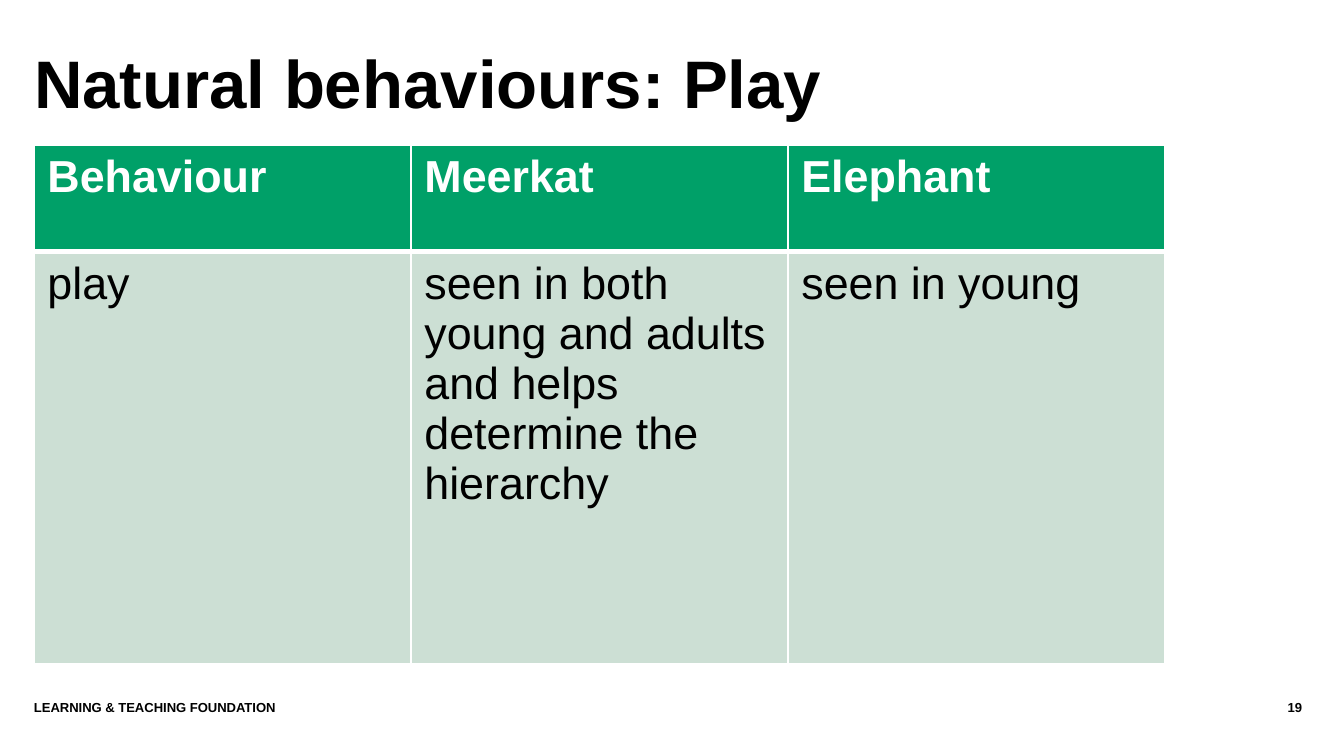
from lxml import etree
from pptx import Presentation
from pptx.dml.color import RGBColor
from pptx.enum import text
from pptx.oxml import ns
from pptx.util import Emu, Pt

TITLE = "Natural behaviours: Play"
ROWS = [
    ("Behaviour", "Meerkat", "Elephant"),
    ("play", "seen in both young and adults and helps determine the hierarchy",
     "seen in young"),
]
FOOTER = "LEARNING & TEACHING FOUNDATION"
PAGE_NUMBER = "19"

BLACK = RGBColor(0x00, 0x00, 0x00)
WHITE = RGBColor(0xFF, 0xFF, 0xFF)
GREEN = RGBColor(0x00, 0xA0, 0x68)
PALE_GREEN = RGBColor(0xCC, 0xDF, 0xD4)

PAGE_WIDTH, PAGE_HEIGHT = 1344, 756
COLUMN_WIDTH = 377
ROW_HEIGHTS = (107, 412)
LEFT, TABLE_TOP = 34, 145
FOOTER_TOP, FOOTER_HEIGHT = 700, 40


def px(length):
    return Emu(round(length * 914400 / 134.4))


def write(frame, words, size, color=BLACK, bold=True, align=text.PP_ALIGN.LEFT):
    para = frame.paragraphs[0]
    para.alignment = align
    span = para.add_run()
    span.text = words
    span.font.name = "Arial"
    span.font.size = Pt(size)
    span.font.bold = bold
    span.font.color.rgb = color
    return para


def clear_margins(frame):
    frame.word_wrap = True
    frame.margin_left = frame.margin_right = frame.margin_top = frame.margin_bottom = 0


def set_borders(cell, widths):
    """Draw white cell borders; widths maps an edge tag to points."""
    properties = cell._tc.get_or_add_tcPr()
    for position, (edge, width) in enumerate(widths.items()):
        line = etree.Element(ns.qn(f"a:{edge}"), w=str(Pt(width)))
        fill = etree.SubElement(line, ns.qn("a:solidFill"))
        etree.SubElement(fill, ns.qn("a:srgbClr"), val=str(WHITE))
        properties.insert(position, line)


def add_footer(page, words, left, width, align):
    box = page.shapes.add_textbox(px(left), px(FOOTER_TOP), px(width), px(FOOTER_HEIGHT))
    clear_margins(box.text_frame)
    write(box.text_frame, words, 7, align=align)


def add_behaviour_table(page):
    columns = len(ROWS[0])
    table = page.shapes.add_table(
        len(ROWS), columns, px(LEFT), px(TABLE_TOP),
        px(COLUMN_WIDTH * columns), px(sum(ROW_HEIGHTS))).table
    for column in table.columns:
        column.width = px(COLUMN_WIDTH)
    for r, row in enumerate(ROWS):
        table.rows[r].height = px(ROW_HEIGHTS[r])
        header = r == 0
        for c, words in enumerate(row):
            cell = table.cell(r, c)
            cell.fill.solid()
            cell.fill.fore_color.rgb = GREEN if header else PALE_GREEN
            write(cell.text_frame, words, 24, WHITE if header else BLACK, header)
            set_borders(cell, {"lnL": 1, "lnR": 1, "lnT": 1 if header else 3,
                               "lnB": 3 if header else 1})


deck = Presentation()
deck.slide_width, deck.slide_height = px(PAGE_WIDTH), px(PAGE_HEIGHT)
page = deck.slides.add_slide(deck.slide_layouts[5])

title = page.shapes.title
title.left, title.top, title.width, title.height = map(px, (LEFT, 36, 1240, 102))
clear_margins(title.text_frame)
title.text_frame.auto_size = text.MSO_AUTO_SIZE.NONE
title.text_frame.vertical_anchor = text.MSO_ANCHOR.MIDDLE
write(title.text_frame, TITLE, 36).line_spacing = 0.9

add_behaviour_table(page)
add_footer(page, FOOTER, LEFT, 1130, text.PP_ALIGN.LEFT)
add_footer(page, PAGE_NUMBER, 1169, 133, text.PP_ALIGN.RIGHT)

deck.save("out.pptx")
